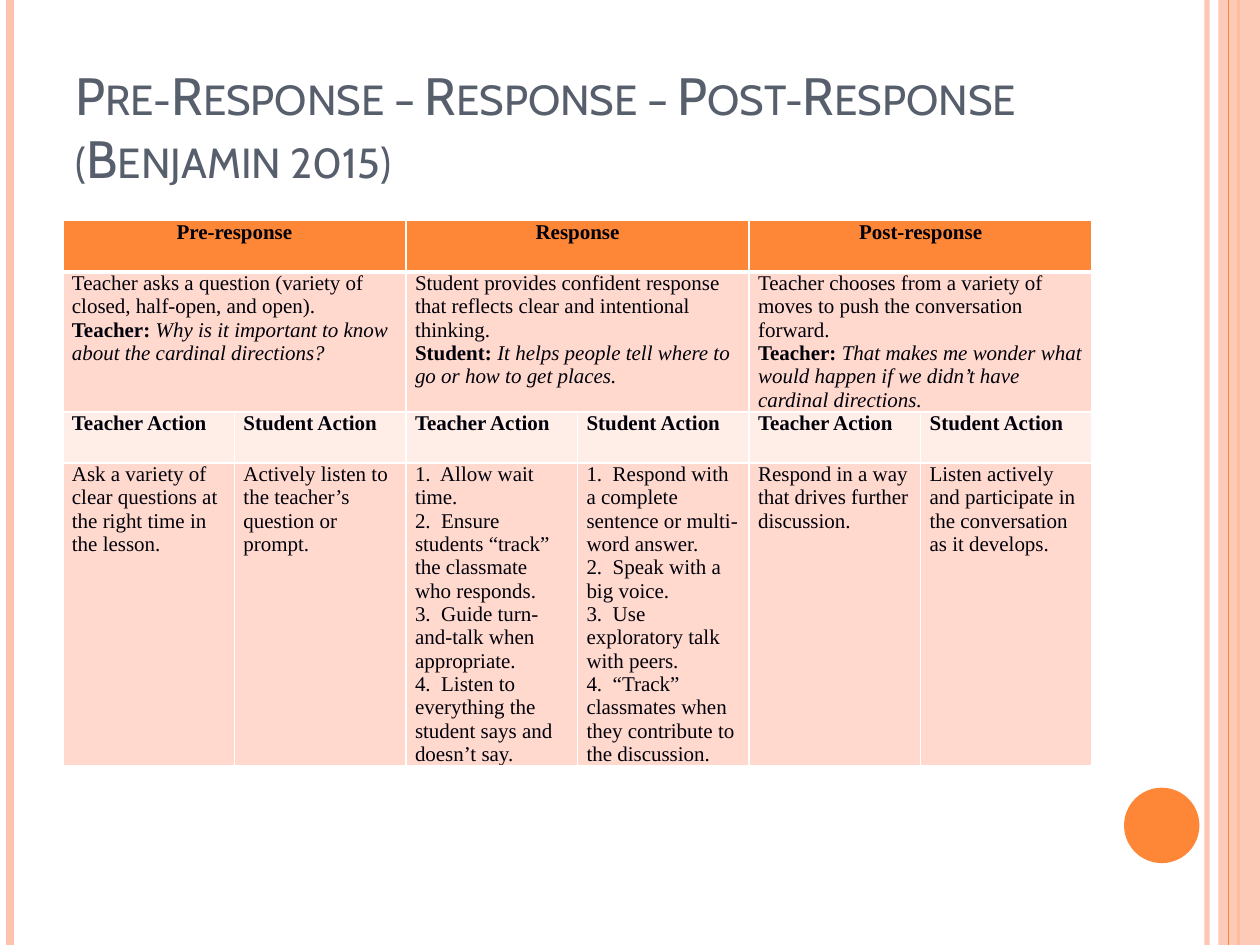
from lxml import etree
from pptx import Presentation
from pptx.dml.color import RGBColor
from pptx.enum import shapes, text
from pptx.oxml import ns
from pptx.util import Cm, Pt

ORANGE = RGBColor(0xFE, 0x86, 0x37)
PEACH = RGBColor(0xFE, 0xC3, 0xAE)
SALMON = RGBColor(0xFF, 0xD9, 0xCE)
BLUSH = RGBColor(0xFF, 0xED, 0xE8)
WHITE = RGBColor(0xFF, 0xFF, 0xFF)
SLATE = RGBColor(0x57, 0x5F, 0x6D)
INK = RGBColor(0x00, 0x00, 0x0A)

PAGE_WIDTH, PAGE_HEIGHT = 25.4, 19.05
LEFT, CONTENT_WIDTH = 1.27, 20.75
ROW_HEIGHT = 1.03
TABLE_FONT, TABLE_SIZE = "Times New Roman", 12

PHASES = ["Pre-response", "Response", "Post-response"]
EXCHANGES = [
    ("Teacher asks a question (variety of closed, half-open, and open).",
     "Teacher: ", "Why is it important to know about the cardinal directions?"),
    ("Student provides confident response that reflects clear and intentional thinking.",
     "Student: ", "It helps people tell where to go or how to get places."),
    ("Teacher chooses from a variety of moves to push the conversation forward.",
     "Teacher:", " That makes me wonder what would happen if we didn’t have cardinal directions."),
]
ROLES = ["Teacher Action", "Student Action"]
ACTIONS = [
    ["Ask a variety of clear questions at the right time in the lesson."],
    ["Actively listen to the teacher’s question or prompt."],
    ["1.  Allow wait time.",
     "2.  Ensure students “track” the classmate who responds.",
     "3.  Guide turn-and-talk when appropriate.",
     "4.  Listen to everything the student says and doesn’t say."],
    ["1.  Respond with a complete sentence or multi-word answer.",
     "2.  Speak with a big voice.",
     "3.  Use exploratory talk with peers.",
     "4.  “Track” classmates when they contribute to the discussion."],
    ["Respond in a way that drives further discussion."],
    ["Listen actively and participate in the conversation as it develops."],
]


def set_opacity(element, percent):
    color = next(element.iter(ns.qn("a:srgbClr")))
    etree.SubElement(color, ns.qn("a:alpha"), val=str(percent * 1000))


def add_stripe(page, x, width, color, opacity=100):
    stripe = page.shapes.add_connector(
        shapes.MSO_CONNECTOR.STRAIGHT, Cm(x), Cm(0), Cm(x), Cm(PAGE_HEIGHT))
    stripe.line.color.rgb = color
    stripe.line.width = Pt(width)
    properties = stripe._element.spPr
    if opacity < 100:
        set_opacity(properties, opacity)
    etree.SubElement(properties, ns.qn("a:effectLst"))


def add_plain_shape(page, kind, left, top, width, height, color):
    shape = page.shapes.add_shape(kind, Cm(left), Cm(top), Cm(width), Cm(height))
    shape.shadow.inherit = False
    shape.fill.solid()
    shape.fill.fore_color.rgb = color
    shape.line.fill.background()
    return shape


def add_decoration(page):
    add_stripe(page, 24.33, 3, PEACH, 93)
    add_stripe(page, 0.2, 4.5, PEACH)
    add_stripe(page, 24.97, 1.5, ORANGE)
    band = add_plain_shape(page, shapes.MSO_SHAPE.RECTANGLE,
                           24.56, 0, 0.84, PAGE_HEIGHT, PEACH)
    set_opacity(band._element.spPr, 87)
    add_stripe(page, 24.77, 0.75, ORANGE)
    add_plain_shape(page, shapes.MSO_SHAPE.OVAL, 22.66, 15.88, 1.52, 1.52, ORANGE)


def add_span(para, content, font, size, color, bold=False, italic=False):
    span = para.add_run()
    span.text = content
    span.font.name = font
    span.font.size = Pt(size)
    span.font.color.rgb = color
    span.font.bold = bold
    span.font.italic = italic
    return span


def set_title(page, content):
    title = page.shapes.title
    title.left, title.top = Cm(LEFT), Cm(0.76)
    title.width, title.height = Cm(CONTENT_WIDTH), Cm(3.18)
    frame = title.text_frame
    frame.vertical_anchor = text.MSO_ANCHOR.BOTTOM
    frame.auto_size = text.MSO_AUTO_SIZE.NONE
    para = frame.paragraphs[0]
    para.alignment = text.PP_ALIGN.LEFT
    span = add_span(para, content, "Cabin", 30, SLATE)
    span.font._element.set("cap", "small")


def set_borders(cell, bottom):
    properties = cell._tc.get_or_add_tcPr()
    widths = {"lnL": 1, "lnR": 1, "lnT": 1, "lnB": bottom}
    for position, (side, width) in enumerate(widths.items()):
        line = etree.Element(ns.qn(f"a:{side}"), w=str(Pt(width)))
        fill = etree.SubElement(line, ns.qn("a:solidFill"))
        etree.SubElement(fill, ns.qn("a:srgbClr"), val=str(WHITE))
        properties.insert(position, line)


def style_cell(cell, color, bottom=1):
    cell.margin_left = cell.margin_right = Cm(0.18)
    cell.margin_top = cell.margin_bottom = Cm(0)
    cell.fill.solid()
    cell.fill.fore_color.rgb = color
    set_borders(cell, bottom)


def write_cell(cell, paragraphs, alignment=text.PP_ALIGN.LEFT):
    """Each paragraph is a list of (content, bold, italic) spans."""
    frame = cell.text_frame
    for index, spans in enumerate(paragraphs):
        para = frame.add_paragraph() if index else frame.paragraphs[0]
        para.alignment = alignment
        for content, bold, italic in spans:
            add_span(para, content, TABLE_FONT, TABLE_SIZE, INK, bold, italic)


def add_response_table(page):
    columns = len(ACTIONS)
    row_colors = [ORANGE, SALMON, BLUSH, SALMON]
    table = page.shapes.add_table(
        len(row_colors), columns, Cm(LEFT), Cm(4.45),
        Cm(CONTENT_WIDTH), Cm(ROW_HEIGHT * len(row_colors))).table
    for row, color in enumerate(row_colors):
        for column in range(columns):
            style_cell(table.cell(row, column), color, 1 if row else 3)

    for index, (phase, exchange) in enumerate(zip(PHASES, EXCHANGES)):
        column = index * len(ROLES)
        for row in range(2):
            table.cell(row, column).merge(table.cell(row, column + 1))
        summary, speaker, quote = exchange
        write_cell(table.cell(0, column), [[(phase, True, False)]],
                   text.PP_ALIGN.CENTER)
        write_cell(table.cell(1, column), [
            [(summary, False, False)],
            [(speaker, True, False), (quote, False, True)]])

    for column, steps in enumerate(ACTIONS):
        role = ROLES[column % len(ROLES)]
        write_cell(table.cell(2, column), [[(role, True, False)]])
        write_cell(table.cell(3, column), [[(step, False, False)] for step in steps])


def main():
    deck = Presentation()
    deck.slide_width, deck.slide_height = Cm(PAGE_WIDTH), Cm(PAGE_HEIGHT)
    page = deck.slides.add_slide(deck.slide_layouts[5])
    add_decoration(page)
    set_title(page, "Pre-Response – Response – Post-Response (Benjamin 2015)")
    add_response_table(page)
    deck.save("out.pptx")


if __name__ == "__main__":
    main()
